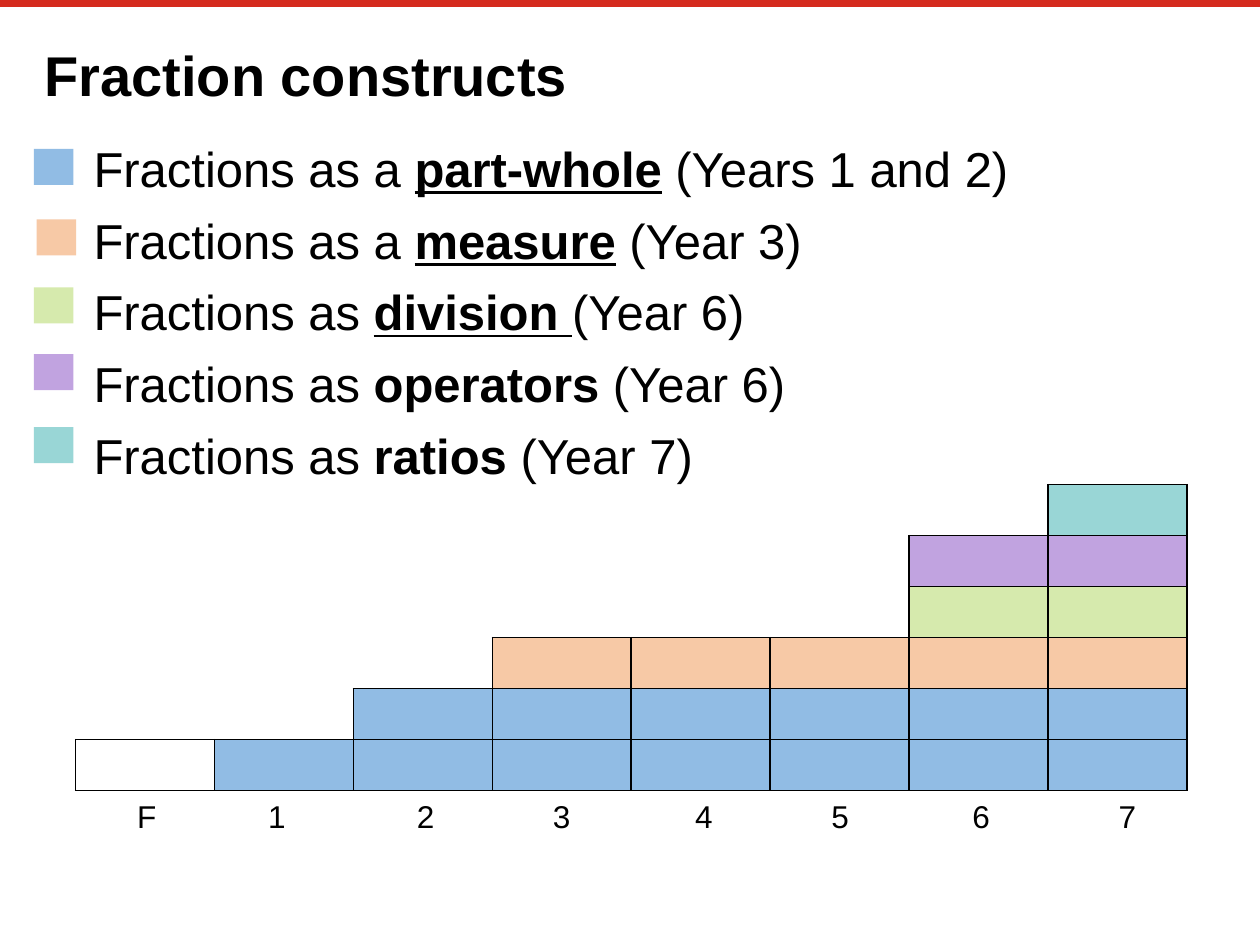
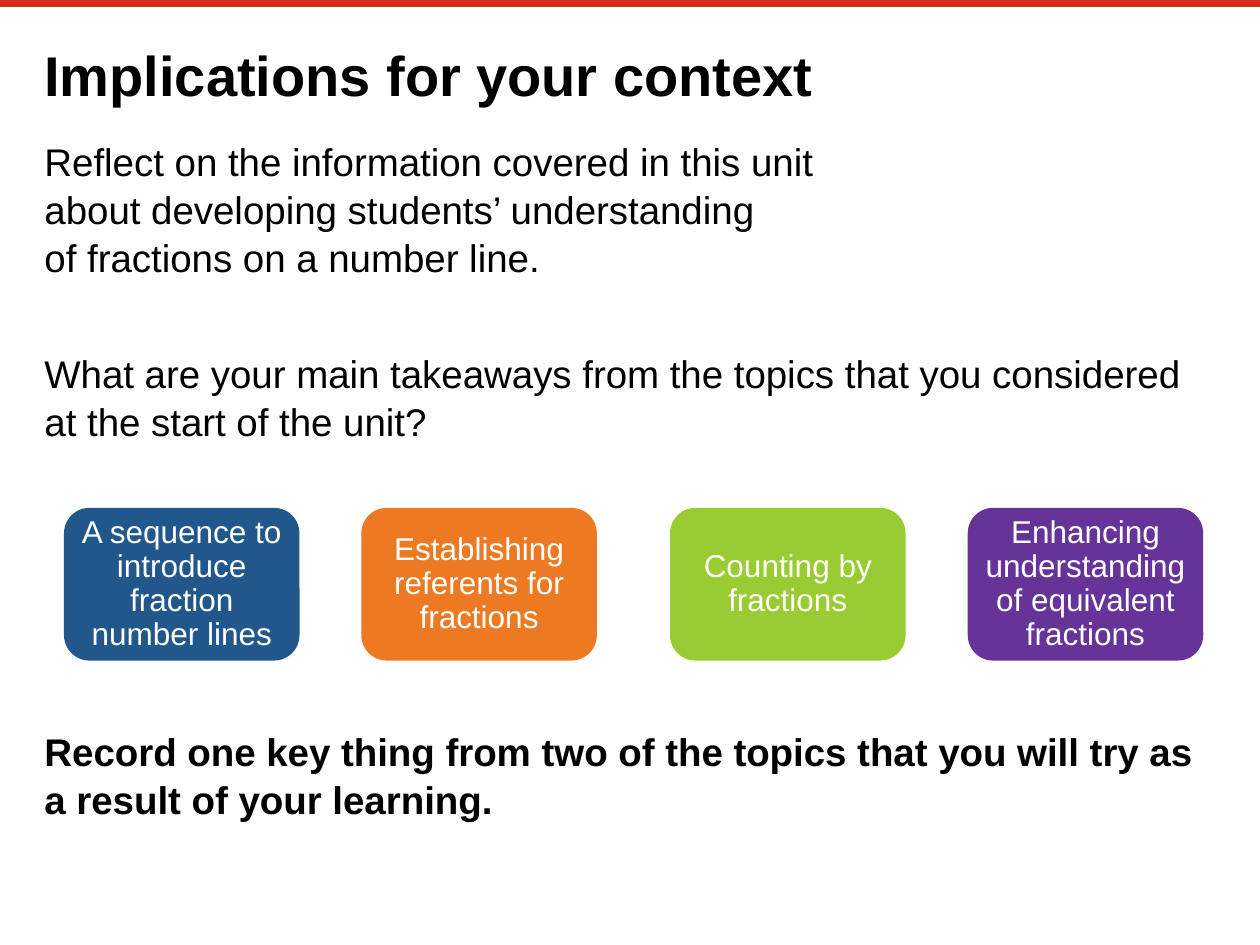
"""Two slides on fraction constructs and what they mean for teaching."""
from lxml import etree
from pptx import Presentation
from pptx.dml.color import RGBColor
from pptx.enum import shapes, text
from pptx.oxml.ns import qn
from pptx.util import Pt

FONT = "Arial"
RED = RGBColor(0xD5, 0x2B, 0x1E)
BLACK = RGBColor(0x00, 0x00, 0x00)
WHITE = RGBColor(0xFF, 0xFF, 0xFF)
BLUE = RGBColor(0x91, 0xBC, 0xE4)
PEACH = RGBColor(0xF7, 0xC9, 0xA6)
LIME = RGBColor(0xD6, 0xEA, 0xAD)
LILAC = RGBColor(0xC1, 0xA3, 0xE0)
TEAL = RGBColor(0x99, 0xD6, 0xD6)
NAVY = RGBColor(0x21, 0x57, 0x8A)
ORANGE = RGBColor(0xED, 0x7A, 0x23)
GREEN = RGBColor(0x99, 0xCC, 0x33)
PURPLE = RGBColor(0x66, 0x33, 0x99)

CONSTRUCTS = [
    ("Fractions as a ", "part-whole", " (Years 1 and 2)", True),
    ("Fractions as a ", "measure", " (Year 3)", True),
    ("Fractions as ", "division ", "(Year 6)", True),
    ("Fractions as ", "operators ", "(Year 6)", False),
    ("Fractions as ", "ratios ", "(Year 7)", False),
]
KEYS = [(19.4, 85, BLUE), (20.9, 125.3, PEACH), (19.4, 164.2, LIME),
        (19.4, 202.3, LILAC), (19.4, 244.1, TEAL)]
YEARS = [("F", 71.3), ("1", 146.2), ("2", 231.1), ("3", 308.9),
         ("4", 390.2), ("5", 468), ("6", 548.6), ("7", 632.2)]
STEPS = [(0, BLUE), (2, BLUE), (3, PEACH), (6, LIME), (6, LILAC), (7, TEAL)]
REFLECTIONS = [
    (["Reflect on the information covered in this unit",
      "about developing students’ understanding",
      "of fractions on a number line."], 0, False),
    (["What are your main takeaways from the topics that you considered "
      "at the start of the unit?"], 39, False),
    (["Record one key thing from two of the topics that you will try as "
      "a result of your learning."], 161, True),
]
TOPICS = [
    ("A sequence to introduce fraction number lines", 36.6, NAVY),
    ("Establishing referents for fractions", 206.5, ORANGE),
    ("Counting by fractions", 382.9, GREEN),
    ("Enhancing understanding of equivalent fractions", 553, PURPLE),
]
STEP_LEFT, STEP_TOP, STEP_WIDTH, STEP_HEIGHT = 43.2, 422.6, 79.38, 29.15


def add_run(paragraph, words, size, color=BLACK, bold=False, underline=False):
    """Append one formatted run."""
    run = paragraph.add_run()
    run.text = words
    font = run.font
    font.name, font.size, font.bold, font.underline = FONT, Pt(size), bold, underline
    font.color.rgb = color


def set_insets(frame, inset):
    """Give a text frame the same inset on all sides."""
    frame.margin_left = frame.margin_right = Pt(inset)
    frame.margin_top = frame.margin_bottom = Pt(inset)


def add_titled_slide(deck, heading):
    """Add a slide with the red top rule and the shared title style."""
    slide = deck.slides.add_slide(deck.slide_layouts[5])
    rule = slide.shapes.add_connector(
        shapes.MSO_CONNECTOR.STRAIGHT, Pt(0), Pt(2.1), Pt(720), Pt(2.1))
    rule.line.color.rgb, rule.line.width = RED, Pt(4.2)
    etree.SubElement(rule._element.spPr, qn("a:effectLst"))
    title = slide.shapes.title
    title.left, title.top, title.width, title.height = Pt(25.4), Pt(20.2), Pt(669), Pt(34.6)
    frame = title.text_frame
    set_insets(frame, 0)
    frame.auto_size = text.MSO_AUTO_SIZE.NONE
    frame.vertical_anchor = text.MSO_ANCHOR.TOP
    line = frame.paragraphs[0]
    line.alignment, line.line_spacing = text.PP_ALIGN.LEFT, 1.08
    add_run(line, heading, 32, bold=True)
    return slide


def add_body(slide, count):
    """Add the body box and return its paragraphs."""
    frame = slide.shapes.add_textbox(Pt(25.4), Pt(77.8), Pt(668.2), Pt(396.7)).text_frame
    frame.word_wrap = True
    set_insets(frame, 0)
    for _ in range(count - 1):
        frame.add_paragraph()
    for paragraph in frame.paragraphs:
        paragraph.line_spacing = 1.04
    return frame.paragraphs


def add_block(slide, preset, left, top, width, height, color):
    """Add a filled shape with no outline or shadow."""
    block = slide.shapes.add_shape(preset, Pt(left), Pt(top), Pt(width), Pt(height))
    block.shadow.inherit = False
    block.fill.solid()
    block.fill.fore_color.rgb = color
    block.line.fill.background()
    return block


def border_cell(cell):
    """Draw a thin black border round a cell."""
    properties = cell._tc.get_or_add_tcPr()
    for index, side in enumerate(("a:lnL", "a:lnR", "a:lnT", "a:lnB")):
        edge = etree.Element(qn(side), w=str(Pt(1)))
        fill = etree.SubElement(edge, qn("a:solidFill"))
        etree.SubElement(fill, qn("a:srgbClr"), val=str(BLACK))
        properties.insert(index, edge)


def add_step(slide, level, first_year, color):
    """Add one row of the staircase, from its first year to the last."""
    count = len(YEARS) - first_year
    table = slide.shapes.add_table(
        1, count, Pt(STEP_LEFT + first_year * STEP_WIDTH),
        Pt(STEP_TOP - level * STEP_HEIGHT),
        Pt(count * STEP_WIDTH), Pt(STEP_HEIGHT)).table
    table.first_row = table.horz_banding = False
    for year, cell in enumerate(table.rows[0].cells, first_year):
        if year == 0:
            cell.fill.background()
        else:
            cell.fill.solid()
            cell.fill.fore_color.rgb = color
        border_cell(cell)


def build_constructs(deck):
    """Build the colour key and the staircase of years."""
    slide = add_titled_slide(deck, "Fraction constructs")
    body = add_body(slide, len(CONSTRUCTS))
    for index, (paragraph, construct) in enumerate(zip(body, CONSTRUCTS)):
        lead, name, years, underlined = construct
        paragraph._p.get_or_add_pPr().set("indent", str(Pt(28.1)))
        paragraph.space_before = Pt(6 if index else 0)
        add_run(paragraph, lead, 28)
        add_run(paragraph, name, 28, bold=True, underline=underlined)
        add_run(paragraph, years, 28)
    for left, top, color in KEYS:
        add_block(slide, shapes.MSO_SHAPE.RECTANGLE, left, top, 22.6, 20.6, color)
    for level, (first_year, color) in enumerate(STEPS):
        add_step(slide, level, first_year, color)
    for year, left in YEARS:
        label = slide.shapes.add_textbox(Pt(left), Pt(452), Pt(24.5), Pt(29)).text_frame
        label.word_wrap = False
        add_run(label.paragraphs[0], year, 18)


def build_implications(deck):
    """Build the reflection prompts and the topic cards."""
    slide = add_titled_slide(deck, "Implications for your context")
    body = add_body(slide, len(REFLECTIONS))
    for paragraph, (lines, gap, bold) in zip(body, REFLECTIONS):
        paragraph.space_before = Pt(gap)
        for index, line in enumerate(lines):
            if index:
                paragraph.add_line_break()
            add_run(paragraph, line, 22, bold=bold)
    for topic, left, color in TOPICS:
        card = add_block(slide, shapes.MSO_SHAPE.ROUNDED_RECTANGLE,
                         left, 290.2, 134.6, 87.3, color)
        frame = card.text_frame
        frame.word_wrap = True
        frame.vertical_anchor = text.MSO_ANCHOR.MIDDLE
        set_insets(frame, 5)
        paragraph = frame.paragraphs[0]
        paragraph.alignment, paragraph.line_spacing = text.PP_ALIGN.CENTER, 0.9
        add_run(paragraph, topic, 18, WHITE)


def main():
    """Build and save the deck."""
    deck = Presentation()
    deck.slide_width, deck.slide_height = Pt(720), Pt(540)
    build_constructs(deck)
    build_implications(deck)
    deck.save("out.pptx")


if __name__ == "__main__":
    main()
